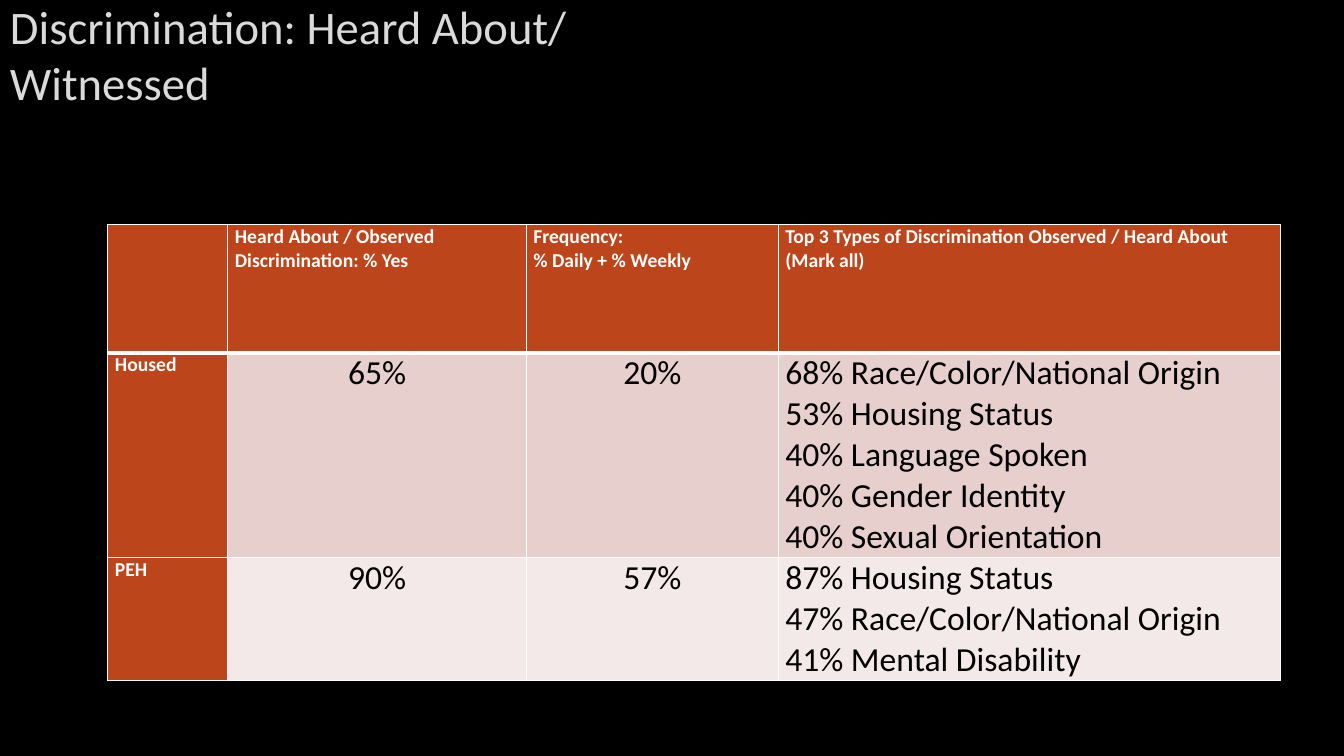
from dataclasses import dataclass

from lxml.etree import SubElement
from pptx import Presentation
from pptx.dml.color import RGBColor
from pptx.enum.text import MSO_ANCHOR, PP_ALIGN
from pptx.oxml.ns import qn
from pptx.util import Inches, Pt


@dataclass(frozen=True)
class Theme:
    font: str = "Calibri"
    background: str = "000000"
    title: str = "DADADA"
    title_outline: str = "404040"
    accent: str = "BC451B"
    light: str = "FFFFFF"
    dark: str = "000000"
    title_size: float = 33.3
    label_size: float = 14
    value_size: float = 24
    outline_width: float = 0.75
    border_width: float = 1
    header_rule_width: float = 3


@dataclass(frozen=True)
class Group:
    name: str
    observed: str
    frequency: str
    top_types: str
    tint: str


THEME = Theme()
COLUMN_WIDTHS = (1.19, 2.96, 2.5, 4.98)
ROW_HEIGHTS = (1.27, 1.95, 1.17)
HEADINGS = (
    "",
    "Heard About / Observed Discrimination: % Yes",
    "Frequency:\n% Daily + % Weekly",
    "Top 3 Types of Discrimination Observed / Heard About (Mark all)",
)
GROUPS = (
    Group("Housed", "65%", "20%",
          "68% Race/Color/National Origin\n53% Housing Status\n40% Language Spoken\n"
          "40% Gender Identity\n40% Sexual Orientation", "E7CFCD"),
    Group("PEH", "90%", "57%",
          "87% Housing Status\n47% Race/Color/National Origin\n41% Mental Disability",
          "F3E9E8"),
)


def write(frame, text: str, *, size: float, color: str, bold: bool = False,
          align=PP_ALIGN.LEFT, space_after: float = 0) -> None:
    frame.word_wrap = True
    frame.text = text
    for paragraph in frame.paragraphs:
        paragraph.alignment = align
        paragraph.space_after = Pt(space_after)
        for font in (paragraph.font, *(run.font for run in paragraph.runs)):
            font.name = THEME.font
            font.size = Pt(size)
            font.bold = bold
            font.color.rgb = RGBColor.from_string(color)


def add_solid_fill(line, color: str):
    fill = SubElement(line, qn("a:solidFill"))
    return SubElement(fill, qn("a:srgbClr"), val=color)


def draw_borders(cell, top: float, bottom: float) -> None:
    widths = {"L": THEME.border_width, "R": THEME.border_width, "T": top, "B": bottom}
    properties = cell._tc.get_or_add_tcPr()
    for side, width in widths.items():
        border = SubElement(properties, qn(f"a:ln{side}"), w=str(Pt(width)))
        add_solid_fill(border, THEME.light)


def draw_cell(cell, text: str, row: int, column: int, tint: str) -> None:
    cell.margin_left = cell.margin_right = Inches(0.07)
    cell.margin_top = cell.margin_bottom = 0
    draw_borders(cell,
                 top=THEME.header_rule_width if row == 1 else THEME.border_width,
                 bottom=THEME.header_rule_width if row == 0 else THEME.border_width)
    is_label = row == 0 or column == 0
    cell.fill.solid()
    cell.fill.fore_color.rgb = RGBColor.from_string(THEME.accent if is_label else tint)
    write(cell.text_frame, text,
          size=THEME.label_size if is_label else THEME.value_size,
          color=THEME.light if is_label else THEME.dark,
          bold=is_label,
          align=PP_ALIGN.CENTER if row and column in (1, 2) else PP_ALIGN.LEFT)


def draw_results(slide) -> None:
    results = slide.shapes.add_table(
        len(ROW_HEIGHTS), len(COLUMN_WIDTHS), Inches(1.07), Inches(2.23),
        Inches(sum(COLUMN_WIDTHS)), Inches(sum(ROW_HEIGHTS))).table
    results.first_col = True
    for column, width in zip(results.columns, COLUMN_WIDTHS):
        column.width = Inches(width)
    for row, height in zip(results.rows, ROW_HEIGHTS):
        row.height = Inches(height)
    for column, heading in enumerate(HEADINGS):
        draw_cell(results.cell(0, column), heading, 0, column, THEME.accent)
    for row, group in enumerate(GROUPS, start=1):
        values = (group.name, group.observed, group.frequency, group.top_types)
        for column, value in enumerate(values):
            draw_cell(results.cell(row, column), value, row, column, group.tint)


def draw_title(slide) -> None:
    title = slide.shapes.add_textbox(0, 0, Inches(6.49), Inches(1.06)).text_frame
    title.vertical_anchor = MSO_ANCHOR.MIDDLE
    write(title, "Discrimination: Heard About/ Witnessed",
          size=THEME.title_size, color=THEME.title, space_after=6)
    properties = title.paragraphs[0].runs[0]._r.get_or_add_rPr()
    outline = SubElement(properties, qn("a:ln"), w=str(Pt(THEME.outline_width)))
    outline_color = add_solid_fill(outline, THEME.title_outline)
    SubElement(outline_color, qn("a:alpha"), val="10000")
    properties.insert(0, outline)


def main() -> None:
    deck = Presentation()
    deck.slide_width, deck.slide_height = Inches(13.33), Inches(7.5)
    slide = deck.slides.add_slide(deck.slide_layouts[6])
    slide.background.fill.solid()
    slide.background.fill.fore_color.rgb = RGBColor.from_string(THEME.background)
    draw_results(slide)
    draw_title(slide)
    deck.save("out.pptx")


if __name__ == "__main__":
    main()
